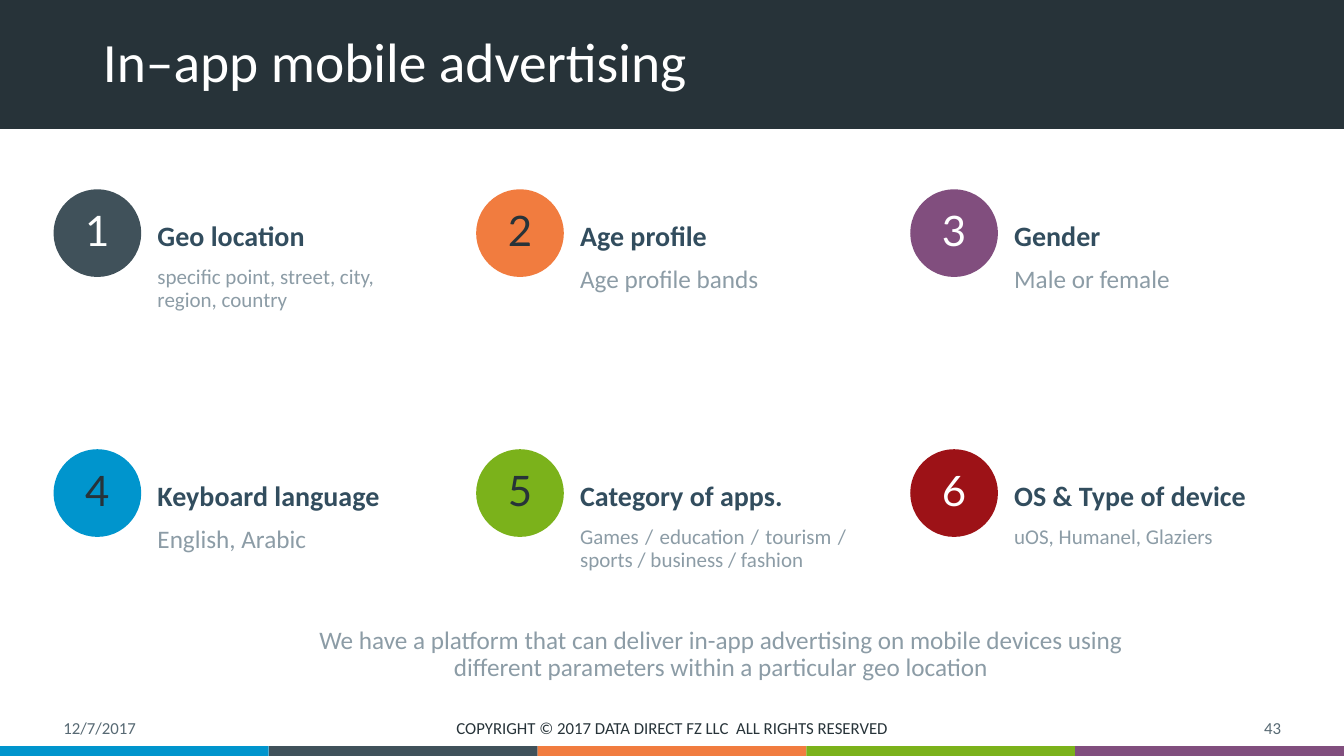
import pptx
import pptx.util
import pptx.dml.color
import pptx.enum.shapes
import pptx.enum.text

Cm = pptx.util.Cm
RGBColor = pptx.dml.color.RGBColor
MSO_SHAPE = pptx.enum.shapes.MSO_SHAPE
ANCHOR = pptx.enum.text.MSO_ANCHOR
ALIGN = pptx.enum.text.PP_ALIGN

WHITE = RGBColor(0xFF, 0xFF, 0xFF)
INK = RGBColor(0x27, 0x33, 0x39)
SLATE = RGBColor(0x40, 0x51, 0x5A)
NAVY = RGBColor(0x32, 0x4D, 0x5E)
GREY = RGBColor(0x8C, 0x9C, 0xA6)
FOOTER = RGBColor(0x57, 0x69, 0x73)
BLUE = RGBColor(0x00, 0x95, 0xCD)
ORANGE = RGBColor(0xF1, 0x7C, 0x3F)
GREEN = RGBColor(0x7B, 0xB2, 0x1B)
PURPLE = RGBColor(0x81, 0x4E, 0x7E)
RED = RGBColor(0x9D, 0x12, 0x17)

prs = pptx.Presentation()
prs.slide_width, prs.slide_height = Cm(33.87), Cm(19.05)
s = prs.slides.add_slide(prs.slide_layouts[5])


def add_block(kind, x, y, w, h, color):
    sp = s.shapes.add_shape(kind, Cm(x), Cm(y), Cm(w), Cm(h))
    sp.shadow.inherit = False
    sp.fill.solid()
    sp.fill.fore_color.rgb = color
    sp.line.fill.background()
    return sp


def write(sp, text, size, color, align=ALIGN.LEFT, anchor=ANCHOR.MIDDLE,
          spacing=0.9, name="Calibri", bold=False):
    tf = sp.text_frame
    frame_format = {"word_wrap": True, "vertical_anchor": anchor,
                    "auto_size": pptx.enum.text.MSO_AUTO_SIZE.NONE}
    for key, value in frame_format.items():
        setattr(tf, key, value)
    p = tf.paragraphs[0]
    p.alignment = align
    p.line_spacing = spacing
    r = p.add_run()
    r.text = text
    for key, value in {"size": pptx.util.Pt(size), "name": name, "bold": bold}.items():
        setattr(r.font, key, value)
    r.font.color.rgb = color


title = s.shapes.title
for key, value in {"left": 2.34, "top": 0.69, "width": 29.21, "height": 1.88}.items():
    setattr(title, key, Cm(value))
write(title, "In–app mobile advertising", 39.6, WHITE)
header = add_block(MSO_SHAPE.RECTANGLE, 0, 0, 33.87, 3.25, INK)
title.element.addprevious(header.element)

stripe = 33.87 / 5
for i, color in enumerate([BLUE, SLATE, ORANGE, GREEN, PURPLE]):
    add_block(MSO_SHAPE.RECTANGLE, i * stripe, 18.8, stripe, 0.25, color)

footers = [
    (1.35, 7.62, "12/7/2017", FOOTER, ALIGN.LEFT),
    (11.23, 11.43, "COPYRIGHT © 2017 DATA DIRECT FZ LLC  ALL RIGHTS RESERVED", INK, ALIGN.CENTER),
    (24.92, 7.62, "43", FOOTER, ALIGN.RIGHT),
]
for x, w, text, color, align in footers:
    box = s.shapes.add_textbox(Cm(x), Cm(17.95), Cm(w), Cm(0.79))
    write(box, text, 12, color, align, spacing=1.0)

columns = [1.35, 12, 22.94]
rows = [4.77, 11.32]
targets = [
    ("Geo location", "specific point, street, city, region, country", 15, ALIGN.LEFT, SLATE, WHITE),
    ("Age profile", "Age profile bands", 18, ALIGN.JUSTIFY, ORANGE, INK),
    ("Gender", "Male or female", 18, ALIGN.JUSTIFY, PURPLE, WHITE),
    ("Keyboard language", "English, Arabic", 18, ALIGN.JUSTIFY, BLUE, INK),
    ("Category of apps.", "Games / education / tourism / sports / business / fashion", 15,
     ALIGN.JUSTIFY, GREEN, INK),
    ("OS & Type of device", "uOS, Humanel, Glaziers", 15, ALIGN.JUSTIFY, RED, WHITE),
]
for i, (heading, detail, size, align, fill, ink) in enumerate(targets):
    x, y = columns[i % 3], rows[i // 3]
    box = s.shapes.add_textbox(Cm(x + 2.37), Cm(y + 0.62), Cm(7.21), Cm(1.19))
    write(box, heading, 20, NAVY, bold=True)
    box = s.shapes.add_textbox(Cm(x + 2.37), Cm(y + 1.82), Cm(7.21), Cm(3.4))
    write(box, detail, size, GREY, align, ANCHOR.TOP)
    badge = add_block(MSO_SHAPE.OVAL, x, y, 2.21, 2.21, fill)
    write(badge, str(i + 1), 30, ink, ALIGN.CENTER, name="Lato")

box = s.shapes.add_textbox(Cm(7.72), Cm(15.69), Cm(20.9), Cm(1.65))
write(box, "We have a platform that can deliver in-app advertising on mobile devices using "
      "different parameters within a particular geo location", 18, GREY, ALIGN.CENTER, ANCHOR.TOP)

prs.save("out.pptx")
